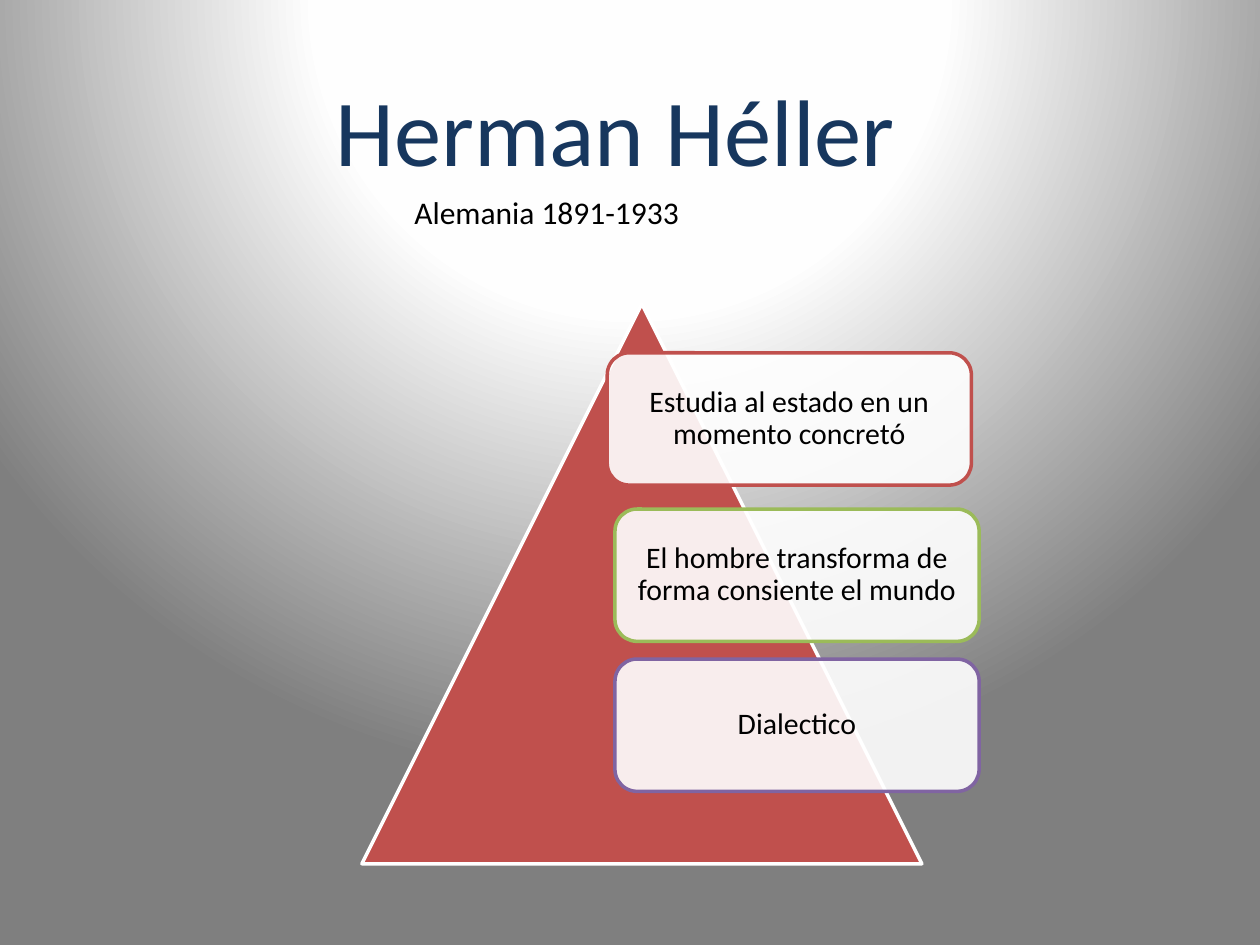
import pptx
import pptx.util
import pptx.dml.color
import pptx.enum.shapes
import pptx.enum.text
import pptx.oxml
import pptx.oxml.ns

Pt = pptx.util.Pt
qn = pptx.oxml.ns.qn
KIND = pptx.enum.shapes.MSO_SHAPE
ALIGN = pptx.enum.text.PP_ALIGN
ANCHOR = pptx.enum.text.MSO_ANCHOR

HUES = {
    "white": "FFFFFF", "pale": "FEFEFE", "gray": "7F7F7F",
    "navy": "17375E", "black": "000000",
    "red": "C0504D", "green": "9BBB59", "purple": "8064A2",
}

# Left, top, border colour and wording of each card
CARDS = [
    (347, 201.6, "red", "Estudia al estado en un momento concretó"),
    (351.4, 290.9, "green", "El hombre transforma de forma consiente el mundo"),
    (351.4, 376.6, "purple", "Dialectico"),
]
CARD_W, CARD_H, EDGE = 208.1, 75.6, 3.7


def color(name):
    return pptx.dml.color.RGBColor.from_string(HUES[name])


def paint_back(slide):
    """Circular gradient centred above the slide."""
    slide.background.fill.gradient()
    old = slide.element.find(".//" + qn("a:gradFill"))
    stops = "".join(
        f'<a:gs pos="{pos * 1000}"><a:srgbClr val="{HUES[name]}"/></a:gs>'
        for pos, name in [(0, "white"), (40, "pale"), (100, "gray")])
    new = pptx.oxml.parse_xml(
        f'<a:gradFill {pptx.oxml.ns.nsdecls("a")} rotWithShape="1">'
        f'<a:gsLst>{stops}</a:gsLst><a:path path="circle">'
        '<a:fillToRect l="50000" t="-80000" r="50000" b="180000"/>'
        '</a:path></a:gradFill>')
    old.getparent().replace(old, new)


def add_form(slide, kind, box, fill, line, alpha=None):
    form = slide.shapes.add_shape(kind, *map(Pt, box))
    form.shadow.inherit = False
    form.fill.solid()
    form.fill.fore_color.rgb = color(fill)
    form.line.color.rgb = color(line)
    form.line.width = Pt(2)
    if alpha:
        tint = form.element.spPr.find(qn("a:solidFill")).find(qn("a:srgbClr"))
        tint.append(pptx.oxml.parse_xml(
            f'<a:alpha {pptx.oxml.ns.nsdecls("a")} val="{alpha * 1000}"/>'))


def add_text(slide, text, box, size, hue="black", align=ALIGN.LEFT,
             anchor=ANCHOR.TOP, inset=None, space=None):
    frame = slide.shapes.add_textbox(*map(Pt, box)).text_frame
    frame.word_wrap = True
    frame.vertical_anchor = anchor
    if inset is not None:
        frame.margin_left = frame.margin_right = Pt(inset)
        frame.margin_top = frame.margin_bottom = Pt(inset)
    para = frame.paragraphs[0]
    para.alignment = align
    if space:
        para.line_spacing = space
    run = para.add_run()
    run.text = text
    run.font.name = "Calibri"
    run.font.size = Pt(size)
    run.font.color.rgb = color(hue)


def add_card(slide, left, top, line, text):
    add_form(slide, KIND.ROUNDED_RECTANGLE, (left, top, CARD_W, CARD_H),
             "white", line, alpha=90)
    inner = (left + EDGE, top + EDGE, CARD_W - 2 * EDGE, CARD_H - 2 * EDGE)
    add_text(slide, text, inner, 17, align=ALIGN.CENTER,
             anchor=ANCHOR.MIDDLE, inset=5, space=0.9)


def main():
    deck = pptx.Presentation()
    deck.slide_width, deck.slide_height = Pt(720), Pt(540)
    slide = deck.slides.add_slide(deck.slide_layouts[6])
    paint_back(slide)

    # Heading and dates
    add_text(slide, "Herman Héller", (54, 37.4, 595.4, 72.7), 54,
             hue="navy", align=ALIGN.CENTER)
    add_text(slide, "Alemania 1891-1933", (229.7, 106.6, 385.2, 29), 18)

    # Pyramid with its cards
    add_form(slide, KIND.ISOSCELES_TRIANGLE, (206.8, 173.6, 320, 320),
             "red", "white")
    for card in CARDS:
        add_card(slide, *card)

    deck.save("out.pptx")


if __name__ == "__main__":
    main()
